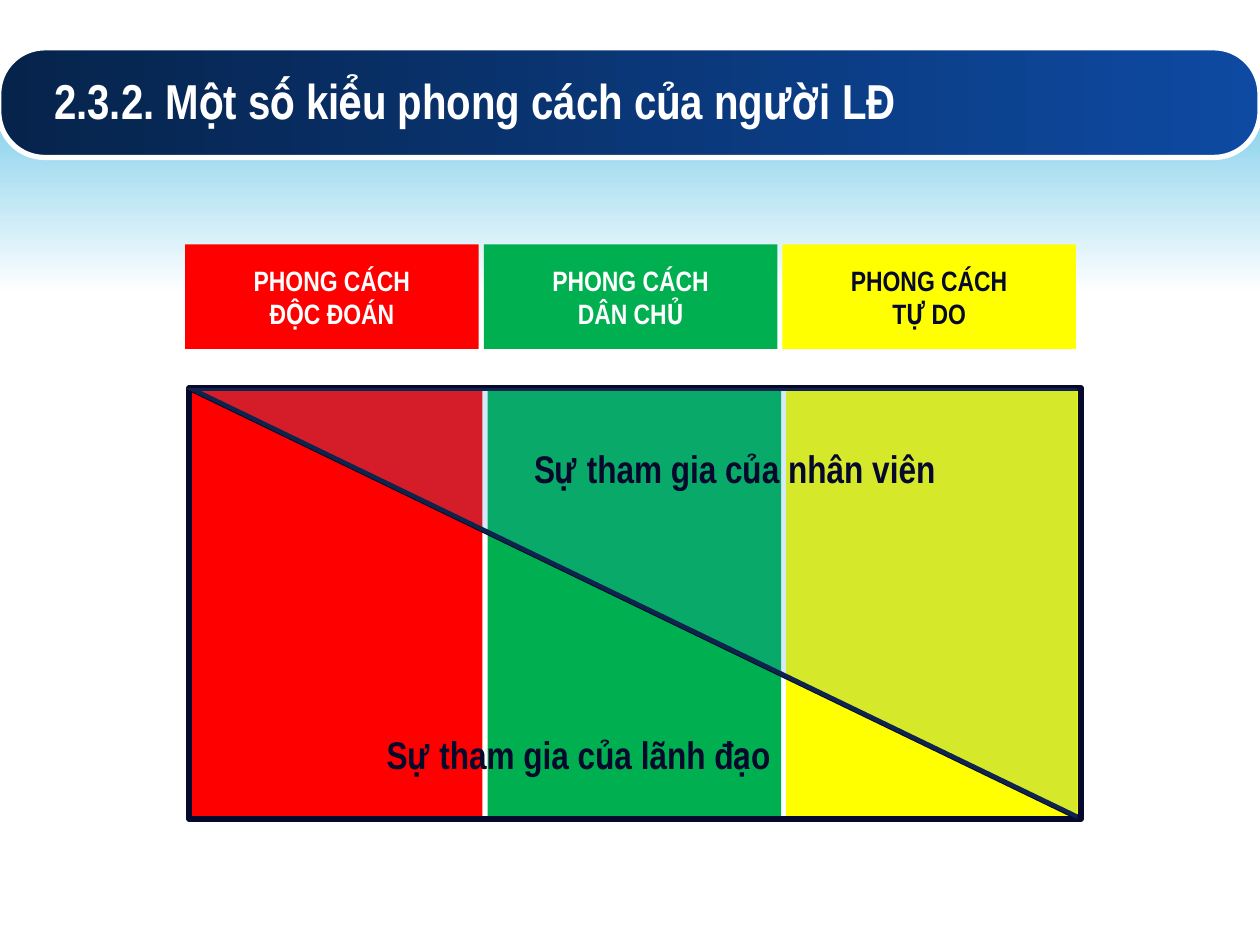
import pptx
import pptx.util
import pptx.dml.color
import pptx.enum.shapes
import pptx.enum.text
import lxml.etree

Inches = pptx.util.Inches
SHAPE = pptx.enum.shapes.MSO_SHAPE
ANCHOR = pptx.enum.text.MSO_ANCHOR
ALIGN = pptx.enum.text.PP_ALIGN
NAVY, WHITE, RED, GREEN, YELLOW = "06092C", "FFFFFF", "FF0000", "00B050", "FFFF00"


def paint(target, *colours, angle=0):
    rgbs = [pptx.dml.color.RGBColor.from_string(colour) for colour in colours]
    if len(rgbs) == 1:
        target.solid()
        target.fore_color.rgb = rgbs[0]
    else:
        target.gradient()
        target.gradient_angle = angle
        for stop, rgb in zip(target.gradient_stops, rgbs):
            stop.color.rgb = rgb


def write(shape, text, size=22, colour=NAVY, align=ALIGN.LEFT, anchor=ANCHOR.TOP):
    frame = shape.text_frame
    frame.word_wrap = True
    frame.vertical_anchor = anchor
    frame.text = text
    for paragraph in frame.paragraphs:
        paragraph.alignment = align
        font = paragraph.runs[0].font
        font.name = "Arial Narrow"
        font.size = pptx.util.Pt(size)
        font.bold = True
        paint(font.fill, colour)


prs = pptx.Presentation()
prs.slide_width, prs.slide_height = Inches(10), Inches(7.5)
slide = prs.slides.add_slide(prs.slide_layouts[5])
shapes = slide.shapes

glow = shapes.add_shape(SHAPE.RECTANGLE, 0, Inches(0.84), Inches(10), Inches(1.49))
glow.shadow.inherit = False
paint(glow.fill, "81CFEB", WHITE, angle=270)
glow.line.fill.background()

band = shapes.add_shape(SHAPE.ROUNDED_RECTANGLE, Inches(-0.01), Inches(0.38), Inches(10.01), Inches(0.87))
band.adjustments[0] = 0.42
band.shadow.inherit = False
paint(band.fill, "06234B", "0E4AA2")
paint(band.line.fill, WHITE)
band.line.width = pptx.util.Pt(3)

title = shapes.title
title.left, title.top, title.width, title.height = Inches(0.33), Inches(0.41), Inches(9.5), Inches(0.76)
write(title, "2.3.2. Một số kiểu phong cách của người LĐ", size=28, colour=WHITE, anchor=ANCHOR.MIDDLE)
shapes._spTree.append(title._element)

chart_left, chart_top, chart_width, chart_height = 1.5, 3.08, 7.08, 3.42
heading_left, column_width, column_step = 1.47, 2.33, 2.37
styles = [("ĐỘC ĐOÁN", RED, WHITE), ("DÂN CHỦ", GREEN, WHITE), ("TỰ DO", YELLOW, NAVY)]
for index, (style, colour, text_colour) in enumerate(styles):
    offset = index * column_step
    column = shapes.add_shape(SHAPE.RECTANGLE, Inches(chart_left + offset), Inches(chart_top),
                              Inches(column_width), Inches(chart_height))
    heading = shapes.add_shape(SHAPE.RECTANGLE, Inches(heading_left + offset), Inches(1.94),
                               Inches(column_width), Inches(0.83))
    for block in (column, heading):
        block.shadow.inherit = False
        paint(block.fill, colour)
        block.line.fill.background()
    write(heading, "PHONG CÁCH\n" + style, size=16, colour=text_colour,
          align=ALIGN.CENTER, anchor=ANCHOR.MIDDLE)

border = shapes.add_shape(SHAPE.RECTANGLE, Inches(chart_left), Inches(chart_top),
                          Inches(chart_width), Inches(chart_height))
border.shadow.inherit = False
border.fill.background()
diagonal = shapes.add_connector(pptx.enum.shapes.MSO_CONNECTOR.STRAIGHT, Inches(chart_left), Inches(chart_top),
                                Inches(chart_left + chart_width), Inches(chart_top + chart_height))
a = "{http://schemas.openxmlformats.org/drawingml/2006/main}"
for outline in (border, diagonal):
    paint(outline.line.fill, NAVY)
    outline.line.width = pptx.util.Pt(3)
lxml.etree.SubElement(diagonal._element.spPr, a + "effectLst")

staff_area = shapes.add_shape(SHAPE.RIGHT_TRIANGLE, Inches(heading_left), Inches(chart_top),
                              Inches(chart_width), Inches(chart_height))
staff_area.rotation = 180
staff_area.shadow.inherit = False
paint(staff_area.fill, "3191D3")
staff_area.line.fill.background()
staff_colour = staff_area._element.spPr.find(f"{a}solidFill/{a}srgbClr")
lxml.etree.SubElement(staff_colour, a + "alpha", val="20000")

for left, top, caption in [(2.97, 5.75, "Sự tham gia của lãnh đạo"),
                           (4.14, 3.48, "Sự tham gia của nhân viên")]:
    participation = shapes.add_textbox(Inches(left), Inches(top), Inches(4.13), Inches(0.47))
    write(participation, caption)

prs.save("out.pptx")
